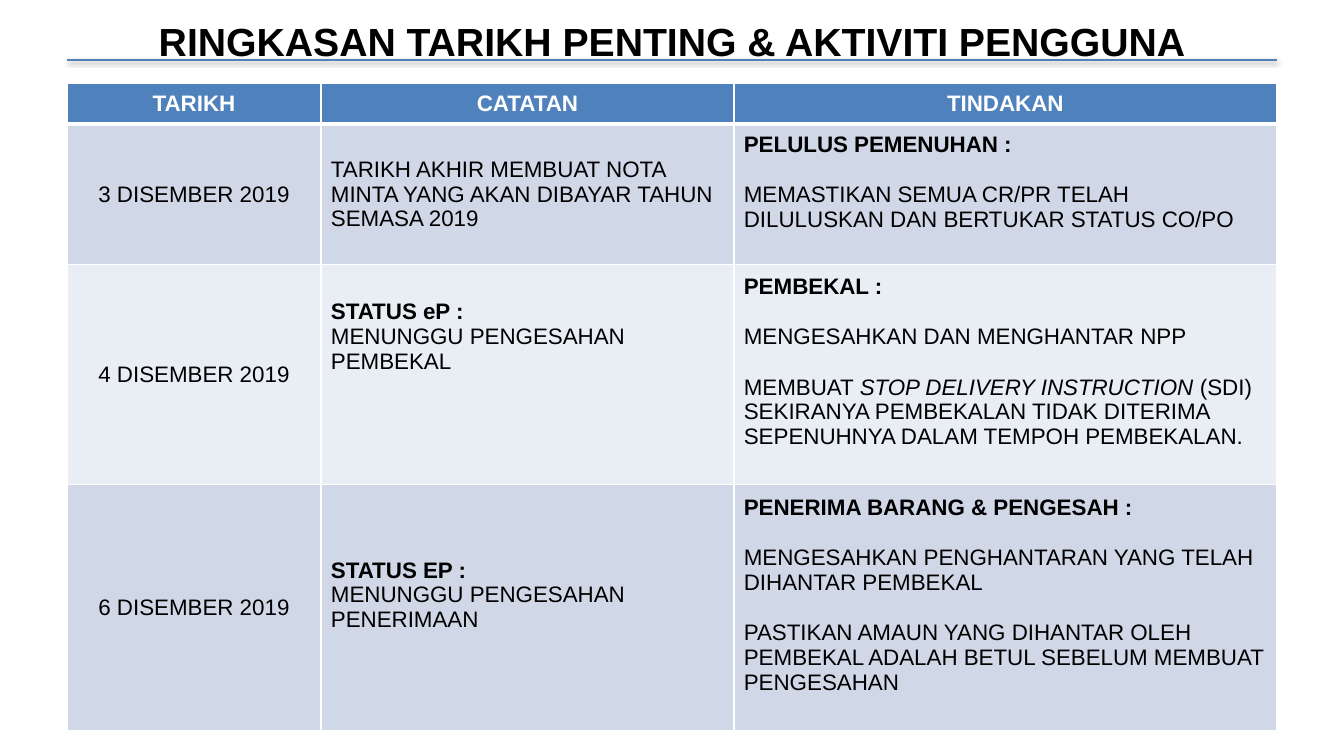
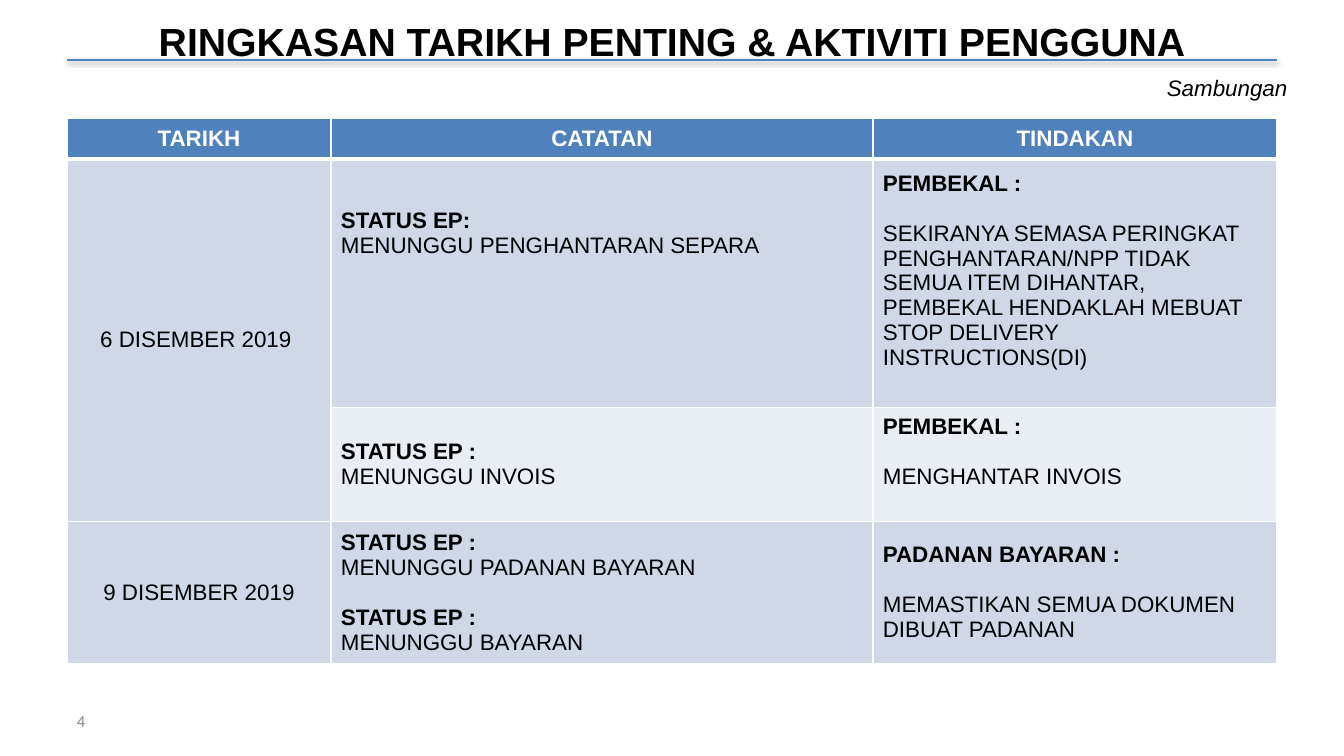
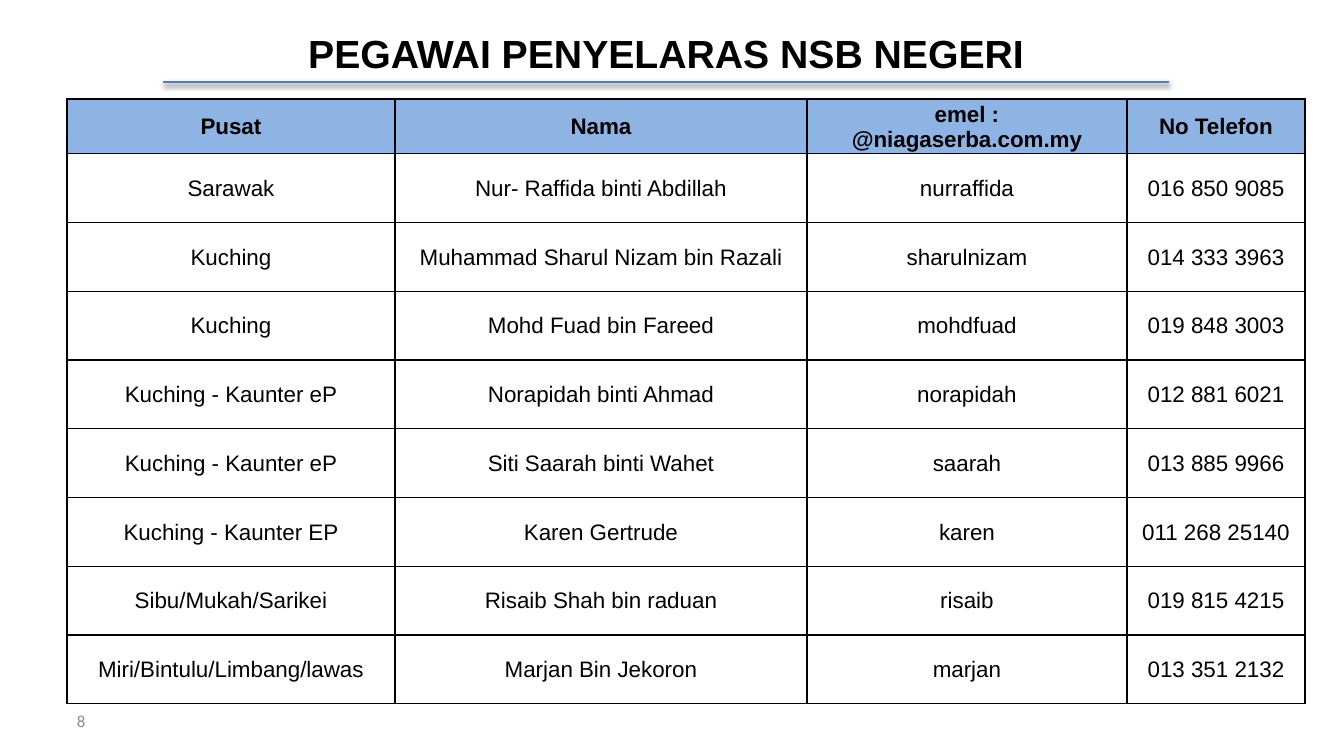
from dataclasses import dataclass

from lxml.etree import SubElement
from pptx import Presentation
from pptx.dml.color import RGBColor
from pptx.enum.shapes import MSO_CONNECTOR
from pptx.enum.text import MSO_ANCHOR, MSO_AUTO_SIZE, PP_ALIGN
from pptx.oxml import parse_xml
from pptx.oxml.ns import nsdecls, qn
from pptx.util import Emu, Pt

BLACK = RGBColor(0x00, 0x00, 0x00)
WHITE = RGBColor(0xFF, 0xFF, 0xFF)
BLUE = RGBColor(0x4F, 0x81, 0xBD)
SKY = RGBColor(0x8E, 0xB4, 0xE3)
BAND_DARK = RGBColor(0xD0, 0xD8, 0xE8)
BAND_LIGHT = RGBColor(0xE9, 0xED, 0xF4)
GREY = RGBColor(0x8C, 0x8C, 0x8C)

EMU_PER_PX = 914400 / 100.8
LEFT, WIDTH = 67, 1210
LINE_PX = 25
LINE_GAP = Pt(18)
TITLE_FONT = {"name": "Arial", "size": Pt(28), "bold": True}
BODY_FONT = {"name": "Arial", "size": Pt(16), "bold": False}
NUMBER_FONT = {"name": "Calibri", "size": Pt(12)}
SHADOW = (
    f'<a:effectLst {nsdecls("a")}><a:outerShdw blurRad="40000" dist="20000" '
    'dir="5400000" rotWithShape="0"><a:srgbClr val="000000">'
    '<a:alpha val="38000"/></a:srgbClr></a:outerShdw></a:effectLst>'
)


@dataclass
class Line:
    text: str
    bold: bool = False
    gap: bool = False


@dataclass
class Cell:
    lines: list
    blank_below: int = 0


def px(n):
    return Emu(round(n * EMU_PER_PX))


def action(who, *tasks, blank_below=1):
    return Cell([Line(who, bold=True)] + [Line(t, gap=True) for t in tasks], blank_below)


def status(label, text, blank_below=0):
    return Cell([Line(label, bold=True), Line(text)], blank_below)


class Deck:
    def __init__(self):
        self.prs = Presentation()
        self.prs.slide_width, self.prs.slide_height = px(1344), px(756)
        self.s = None

    def style(self, font, values, color):
        for key, value in values.items():
            setattr(font, key, value)
        font.color.rgb = color

    def slide(self, title, number, x=LEFT, y=12, w=WIDTH, rule_y=60):
        self.s = self.prs.slides.add_slide(self.prs.slide_layouts[5])
        sp = self.s.shapes.title
        sp.left, sp.top, sp.width, sp.height = px(x), px(y), px(w), px(57)
        tf = sp.text_frame
        tf.text = title
        tf.vertical_anchor = MSO_ANCHOR.TOP
        tf.auto_size = MSO_AUTO_SIZE.SHAPE_TO_FIT_TEXT
        p = tf.paragraphs[0]
        p.alignment = PP_ALIGN.CENTER
        self.style(p.runs[0].font, TITLE_FONT, BLACK)
        self.rule(x, rule_y, w)
        self.label(number, (LEFT, 701, 313, 40), NUMBER_FONT, GREY)

    def rule(self, x, y, w):
        line = self.s.shapes.add_connector(
            MSO_CONNECTOR.STRAIGHT, px(x), px(y), px(x + w), px(y))
        line.line.color.rgb = BLUE
        line.line.width = Pt(2)
        line._element.spPr.append(parse_xml(SHADOW))

    def label(self, text, box, font, color, wrap=True):
        sp = self.s.shapes.add_textbox(*map(px, box))
        tf = sp.text_frame
        tf.word_wrap = wrap
        tf.vertical_anchor = MSO_ANCHOR.MIDDLE
        r = tf.paragraphs[0].add_run()
        r.text = text
        self.style(r.font, font, color)

    def borders(self, cell, color, top, bottom):
        tcPr = cell._tc.get_or_add_tcPr()
        for side, width in (("L", 1), ("R", 1), ("T", top), ("B", bottom)):
            ln = SubElement(tcPr, qn(f"a:ln{side}"), w=str(Pt(width)))
            fill = SubElement(ln, qn("a:solidFill"))
            SubElement(fill, qn("a:srgbClr"), val=str(color))

    def fill_text(self, cell, content, align, color, bold):
        tf = cell.text_frame
        for i, line in enumerate(content.lines):
            p = tf.paragraphs[0] if i == 0 else tf.add_paragraph()
            p.alignment = align
            if line.gap:
                p.space_before = LINE_GAP
            for j, part in enumerate(line.text.split("|")):
                r = p.add_run()
                r.text = part
                self.style(r.font, BODY_FONT, color)
                r.font.bold = bold or line.bold
                r.font.italic = j % 2 == 1

    def table(self, y, cols, heights, rows, border, header, header_text, bands,
              margins=(10, 5, 10, 5), header_rule=1, centred=None):
        centred = range(len(cols)) if centred is None else centred
        frame = self.s.shapes.add_table(
            len(rows), len(cols), px(LEFT), px(y), px(sum(cols)), px(sum(heights)))
        tbl = frame.table
        tbl.first_row = tbl.horz_banding = False
        for col, w in zip(tbl.columns, cols):
            col.width = px(w)
        for row, h in zip(tbl.rows, heights):
            row.height = px(h)
        left, top, right, bottom = margins
        for i, row in enumerate(rows):
            for j, content in enumerate(row):
                cell = tbl.cell(i, j)
                if isinstance(content, str):
                    content = Cell([Line(content)])
                self.borders(cell, border, header_rule if i == 1 else 1,
                             header_rule if i == 0 else 1)
                color = header if i == 0 else bands[(i - 1) % len(bands)]
                if content is None:
                    tbl.cell(i - 1, j).merge(cell)
                    color = bands[0]
                if color is None:
                    cell.fill.background()
                else:
                    cell.fill.solid()
                    cell.fill.fore_color.rgb = color
                if content is None:
                    continue
                cell.vertical_anchor = MSO_ANCHOR.MIDDLE
                cell.margin_left, cell.margin_top = px(left), px(top)
                cell.margin_right = px(right)
                cell.margin_bottom = px(bottom + LINE_PX * content.blank_below)
                align = PP_ALIGN.CENTER if i == 0 or j in centred else PP_ALIGN.LEFT
                self.fill_text(cell, content, align,
                               header_text if i == 0 else BLACK, i == 0)

    def schedule(self, y, cols, heights, rows):
        self.table(y, cols, heights, [("TARIKH", "CATATAN", "TINDAKAN")] + rows,
                   WHITE, BLUE, WHITE, (BAND_DARK, BAND_LIGHT),
                   header_rule=3, centred=(0,))


def main():
    deck = Deck()
    summary = "RINGKASAN TARIKH PENTING & AKTIVITI PENGGUNA"

    deck.slide(summary, "3")
    deck.schedule(83, (254, 413, 543), (41, 134, 209, 234), [
        ("3 DISEMBER 2019",
         "TARIKH AKHIR MEMBUAT NOTA MINTA YANG AKAN DIBAYAR TAHUN SEMASA 2019",
         action("PELULUS PEMENUHAN :",
                "MEMASTIKAN SEMUA CR/PR TELAH DILULUSKAN DAN BERTUKAR STATUS CO/PO")),
        ("4 DISEMBER 2019",
         status("STATUS eP :", "MENUNGGU PENGESAHAN PEMBEKAL", 3),
         action("PEMBEKAL :",
                "MENGESAHKAN DAN MENGHANTAR NPP",
                "MEMBUAT |STOP DELIVERY INSTRUCTION| (SDI) SEKIRANYA PEMBEKALAN "
                "TIDAK DITERIMA SEPENUHNYA DALAM TEMPOH PEMBEKALAN.")),
        ("6 DISEMBER 2019",
         status("STATUS EP :", "MENUNGGU PENGESAHAN PENERIMAAN", 1),
         action("PENERIMA BARANG & PENGESAH :",
                "MENGESAHKAN PENGHANTARAN YANG TELAH DIHANTAR PEMBEKAL",
                "PASTIKAN AMAUN YANG DIHANTAR OLEH PEMBEKAL ADALAH BETUL "
                "SEBELUM MEMBUAT PENGESAHAN")),
    ])

    deck.slide(summary, "4")
    deck.schedule(118, (264, 542, 404), (41, 234, 109, 135), [
        ("6 DISEMBER 2019 ",
         status("STATUS EP:", "MENUNGGU PENGHANTARAN SEPARA", 4),
         action("PEMBEKAL :",
                "SEKIRANYA SEMASA PERINGKAT PENGHANTARAN/NPP TIDAK SEMUA ITEM "
                "DIHANTAR, PEMBEKAL HENDAKLAH MEBUAT STOP DELIVERY INSTRUCTIONS(DI)")),
        (None,
         status("STATUS EP :", "MENUNGGU INVOIS"),
         action("PEMBEKAL :", "MENGHANTAR INVOIS")),
        ("9 DISEMBER 2019",
         Cell([Line("STATUS EP :", bold=True), Line("MENUNGGU PADANAN BAYARAN"),
               Line("STATUS EP :", bold=True, gap=True), Line("MENUNGGU BAYARAN")]),
         action("PADANAN BAYARAN :", "MEMASTIKAN SEMUA DOKUMEN DIBUAT PADANAN",
                blank_below=0)),
    ])
    deck.label("Sambungan", (1157, 69, 142, 37), {**BODY_FONT, "italic": True},
               BLACK, wrap=False)

    deck.slide("PEGAWAI PENYELARAS NSB NEGERI", "8", x=163, y=24, w=1006, rule_y=82)
    officers = [
        ("Pusat", "Nama", Cell([Line("emel :"), Line("@niagaserba.com.my")]), "No Telefon"),
        ("Sarawak", "Nur- Raffida binti Abdillah", "nurraffida", "016 850 9085"),
        ("Kuching", "Muhammad Sharul Nizam bin Razali", "sharulnizam", "014 333 3963"),
        ("Kuching", "Mohd Fuad bin Fareed", "mohdfuad", "019 848 3003"),
        ("Kuching - Kaunter eP", "Norapidah binti Ahmad", "norapidah", "012 881 6021"),
        ("Kuching - Kaunter eP", "Siti Saarah binti Wahet", "saarah", "013 885 9966"),
        ("Kuching - Kaunter EP", "Karen Gertrude", "karen", "011 268 25140"),
        ("Sibu/Mukah/Sarikei", "Risaib Shah bin raduan", "risaib", "019 815 4215"),
        ("Miri/Bintulu/Limbang/lawas", "Marjan Bin Jekoron", "marjan", "013 351 2132"),
    ]
    deck.table(99, (328, 412, 320, 178), [51] + [550 / 8] * 8, officers,
               BLACK, SKY, BLACK, (None,), margins=(1, 1, 1, 0))

    deck.prs.save("out.pptx")


if __name__ == "__main__":
    main()
